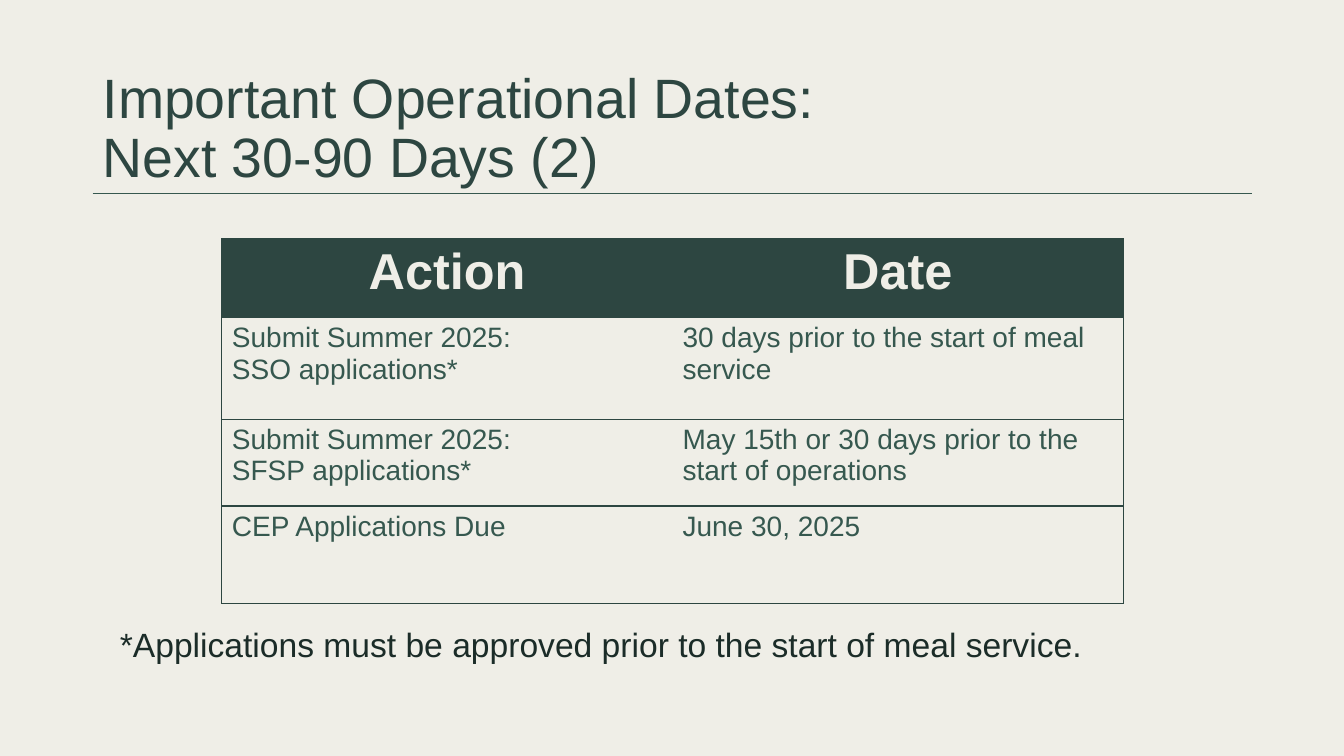
from pptx import Presentation
from pptx.dml.color import RGBColor
from pptx.enum.shapes import MSO_CONNECTOR as CONNECTOR
from pptx.enum.text import MSO_ANCHOR as ANCHOR, PP_ALIGN as ALIGN
from pptx.oxml.ns import qn
from pptx.util import Inches, Pt
from lxml.etree import SubElement

CREAM, DARK, GREEN, INK = "EFEEE7", "2D4641", "36584F", "1B2C28"
COLUMN_WIDTH = 4.47
ROW_HEIGHTS = [0.78, 1.01, 0.86, 0.97]
ROWS = [
    ("Action", "Date"),
    ("Submit Summer 2025:\nSSO applications*", "30 days prior to the start of meal service"),
    ("Submit Summer 2025:\nSFSP applications*", "May 15th or 30 days prior to the start of operations"),
    ("CEP Applications Due", "June 30, 2025"),
]


def color(value):
    return RGBColor.from_string(value)


def add_span(para, text, size, hue, bold=False):
    span = para.add_run()
    span.text = text
    span.font.name = "Arial"
    span.font.size = Pt(size)
    span.font.bold = bold
    span.font.color.rgb = color(hue)


def add_box(page, left, top, width, height, lines, size, hue, anchor=ANCHOR.TOP, spacing=1.0):
    """Add a text box whose lines share one paragraph."""
    box = page.shapes.add_textbox(Inches(left), Inches(top), Inches(width), Inches(height))
    frame = box.text_frame
    frame.word_wrap = True
    frame.vertical_anchor = anchor
    para = frame.paragraphs[0]
    para.line_spacing = spacing
    for number, line in enumerate(lines):
        if number:
            para.add_line_break()
        add_span(para, line, size, hue)


def add_rule(page, left, right, top):
    rule = page.shapes.add_connector(
        CONNECTOR.STRAIGHT, Inches(left), Inches(top), Inches(right), Inches(top))
    rule.line.color.rgb = color(GREEN)
    rule.line.width = Pt(0.75)
    SubElement(rule._element.spPr, qn("a:effectLst"))


def set_borders(cell, drawn):
    """Draw the sides named in drawn and clear the others."""
    properties = cell._tc.get_or_add_tcPr()
    for side in "LRTB":
        border = SubElement(properties, qn(f"a:ln{side}"), w=str(Pt(1)))
        if side in drawn:
            fill = SubElement(border, qn("a:solidFill"))
            SubElement(fill, qn("a:srgbClr"), val=DARK)
        else:
            SubElement(border, qn("a:noFill"))


def fill_cell(cell, text, header):
    for number, line in enumerate(text.split("\n")):
        frame = cell.text_frame
        para = frame.add_paragraph() if number else frame.paragraphs[0]
        para.alignment = ALIGN.CENTER if header else ALIGN.LEFT
        add_span(para, line, 36 if header else 20, CREAM if header else GREEN, header)
    if header:
        cell.fill.solid()
        cell.fill.fore_color.rgb = color(DARK)
    else:
        cell.fill.background()


def add_dates_table(page, left, top):
    table = page.shapes.add_table(
        len(ROWS), 2, Inches(left), Inches(top),
        Inches(2 * COLUMN_WIDTH), Inches(sum(ROW_HEIGHTS))).table
    for column in table.columns:
        column.width = Inches(COLUMN_WIDTH)
    for row_number, (texts, height) in enumerate(zip(ROWS, ROW_HEIGHTS)):
        table.rows[row_number].height = Inches(height)
        for text, side, cell in zip(texts, "LR", table.rows[row_number].cells):
            set_borders(cell, side + "TB")
            fill_cell(cell, text, header=row_number == 0)


def main():
    deck = Presentation()
    deck.slide_width, deck.slide_height = Inches(13.33), Inches(7.5)
    page = deck.slides.add_slide(deck.slide_layouts[6])
    page.background.fill.solid()
    page.background.fill.fore_color.rgb = color(CREAM)
    add_rule(page, 0.92, 12.42, 1.92)
    add_box(page, 0.92, 0.75, 11.5, 1.08,
            ["Important Operational Dates: ", "Next 30-90 Days (2)"],
            39.6, DARK, ANCHOR.MIDDLE, 0.9)
    add_dates_table(page, 2.2, 2.37)
    add_box(page, 1.09, 6.14, 11.62, 0.76,
            ["*Applications must be approved prior to the start of meal service."], 24, INK)
    deck.save("out.pptx")


if __name__ == "__main__":
    main()
